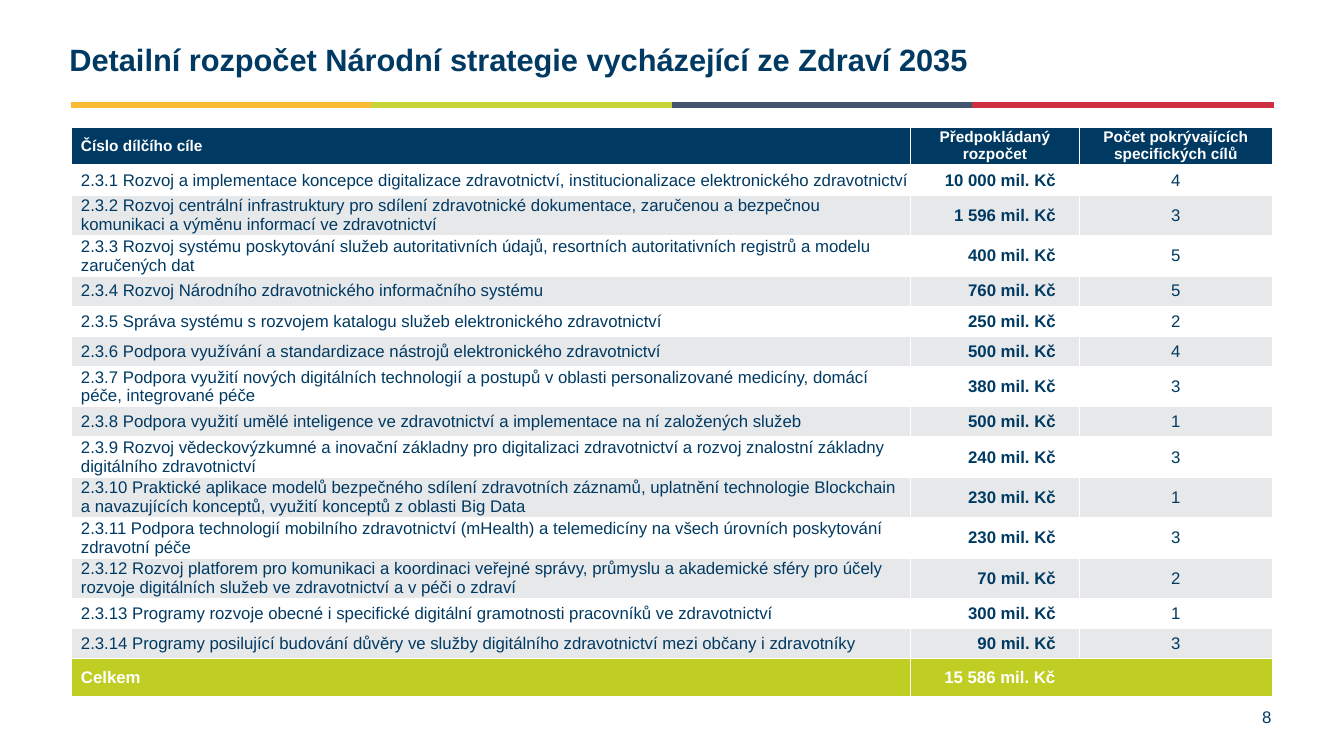
from dataclasses import dataclass

from pptx import Presentation
from pptx.dml.color import RGBColor
from pptx.enum.shapes import MSO_SHAPE
from pptx.enum.text import MSO_ANCHOR, PP_ALIGN
from pptx.util import Cm, Pt


@dataclass(frozen=True)
class Theme:
    font: str = "Arial"
    navy: str = "003A63"
    white: str = "FFFFFF"
    grey: str = "E7E8EA"
    lime: str = "C0CD22"
    stripes: tuple = ("FABB33", "C7D539", "43546F", "CD2F41")
    title_size: int = 22
    header_size: int = 11
    body_size: int = 12


theme = Theme()


def write(frame, text, size=theme.body_size, color=theme.navy, bold=False,
          align=PP_ALIGN.LEFT, spacing=1.0):
    frame.word_wrap = True
    para = frame.paragraphs[0]
    para.text = text
    para.alignment = align
    para.line_spacing = spacing
    for span in para.runs:
        span.font.name = theme.font
        span.font.size = Pt(size)
        span.font.bold = bold
        span.font.color.rgb = RGBColor.from_string(color)


deck = Presentation()
deck.slide_width = Cm(33.87)
deck.slide_height = Cm(19.05)
page = deck.slides.add_slide(deck.slide_layouts[6])

title = page.shapes.add_textbox(Cm(1.5), Cm(1.02), Cm(31.12), Cm(1.32))
write(title.text_frame, "Detailní rozpočet Národní strategie vycházející ze Zdraví 2035",
      size=theme.title_size, bold=True, spacing=0.9)

left = 1.81
stripe_width = 7.57
for index, color in enumerate(theme.stripes):
    stripe = page.shapes.add_shape(MSO_SHAPE.RECTANGLE, Cm(left + index * stripe_width),
                                   Cm(2.59), Cm(stripe_width), Cm(0.12))
    stripe.shadow.inherit = False
    stripe.fill.solid()
    stripe.fill.fore_color.rgb = RGBColor.from_string(color)
    stripe.line.color.rgb = RGBColor.from_string(color)
    stripe.line.width = Pt(1)

single, double = 0.76, 0.96
header = ("Číslo dílčího cíle", "Předpokládaný rozpočet", "Počet pokrývajících specifických cílů")
goals = [
    ("2.3.1 Rozvoj a implementace koncepce digitalizace zdravotnictví, institucionalizace elektronického zdravotnictví", "10 000", 4, single),
    ("2.3.2 Rozvoj centrální infrastruktury pro sdílení zdravotnické dokumentace, zaručenou a bezpečnou komunikaci a výměnu informací ve zdravotnictví", "1 596", 3, double),
    ("2.3.3 Rozvoj systému poskytování služeb autoritativních údajů, resortních autoritativních registrů a modelu zaručených dat", "400", 5, double),
    ("2.3.4 Rozvoj Národního zdravotnického informačního systému", "760", 5, single),
    ("2.3.5 Správa systému s rozvojem katalogu služeb elektronického zdravotnictví", "250", 2, single),
    ("2.3.6 Podpora využívání a standardizace nástrojů elektronického zdravotnictví", "500", 4, single),
    ("2.3.7 Podpora využití nových digitálních technologií a postupů v oblasti personalizované medicíny, domácí péče, integrované péče", "380", 3, double),
    ("2.3.8 Podpora využití umělé inteligence ve zdravotnictví a implementace na ní založených služeb", "500", 1, single),
    ("2.3.9 Rozvoj vědeckovýzkumné a inovační základny pro digitalizaci zdravotnictví a rozvoj znalostní základny digitálního zdravotnictví", "240", 3, double),
    ("2.3.10 Praktické aplikace modelů bezpečného sdílení zdravotních záznamů, uplatnění technologie Blockchain \na navazujících konceptů, využití konceptů z oblasti Big Data", "230", 1, double),
    ("2.3.11 Podpora technologií mobilního zdravotnictví (mHealth) a telemedicíny na všech úrovních poskytování zdravotní péče", "230", 3, double),
    ("2.3.12 Rozvoj platforem pro komunikaci a koordinaci veřejné správy, průmyslu a akademické sféry pro účely rozvoje digitálních služeb ve zdravotnictví a v péči o zdraví", "70", 2, double),
    ("2.3.13 Programy rozvoje obecné i specifické digitální gramotnosti pracovníků ve zdravotnictví", "300", 1, single),
    ("2.3.14 Programy posilující budování důvěry ve služby digitálního zdravotnictví mezi občany i zdravotníky", "90", 3, single),
]
rows = [header]
rows += [(goal, f"{budget} mil. Kč", str(count)) for goal, budget, count, height in goals]
rows += [("Celkem", "15 586 mil. Kč", "")]
heights = [double] + [goal[3] for goal in goals] + [double]
widths = (21.13, 4.27, 4.85)
total_row = len(rows) - 1

table = page.shapes.add_table(len(rows), len(widths), Cm(left), Cm(3.2),
                              Cm(sum(widths)), Cm(sum(heights))).table
for column, width in zip(table.columns, widths):
    column.width = Cm(width)
for row, height in zip(table.rows, heights):
    row.height = Cm(height)
table.cell(total_row, 1).merge(table.cell(total_row, 2))

for row_index, texts in enumerate(rows):
    is_header = row_index == 0
    is_total = row_index == total_row
    is_goal = not (is_header or is_total)
    if is_header:
        fill = theme.navy
    elif is_total:
        fill = theme.lime
    else:
        fill = theme.white if row_index % 2 else theme.grey
    for column_index, text in enumerate(texts):
        cell = table.cell(row_index, column_index)
        cell.fill.solid()
        cell.fill.fore_color.rgb = RGBColor.from_string(fill)
        if cell.is_spanned:
            continue
        cell.vertical_anchor = MSO_ANCHOR.MIDDLE
        cell.margin_top = cell.margin_bottom = 0
        cell.margin_left = Cm(0.23 if column_index == 0 else 0.02)
        cell.margin_right = Cm(0.02)
        align = PP_ALIGN.LEFT if column_index == 0 else PP_ALIGN.CENTER
        if column_index == 1 and is_goal:
            cell.margin_right = Cm(0.6)
            align = PP_ALIGN.RIGHT
        elif column_index == 1 and is_total:
            cell.margin_left = Cm(0.1)
            cell.margin_right = Cm(4.7)
        write(cell.text_frame, text, align=align,
              size=theme.header_size if is_header else theme.body_size,
              color=theme.navy if is_goal else theme.white,
              bold=not is_goal or column_index == 1)

number = page.shapes.add_textbox(Cm(26.04), Cm(17.55), Cm(6.25), Cm(1.02))
number.text_frame.vertical_anchor = MSO_ANCHOR.MIDDLE
write(number.text_frame, "8", align=PP_ALIGN.RIGHT)

deck.save("out.pptx")
